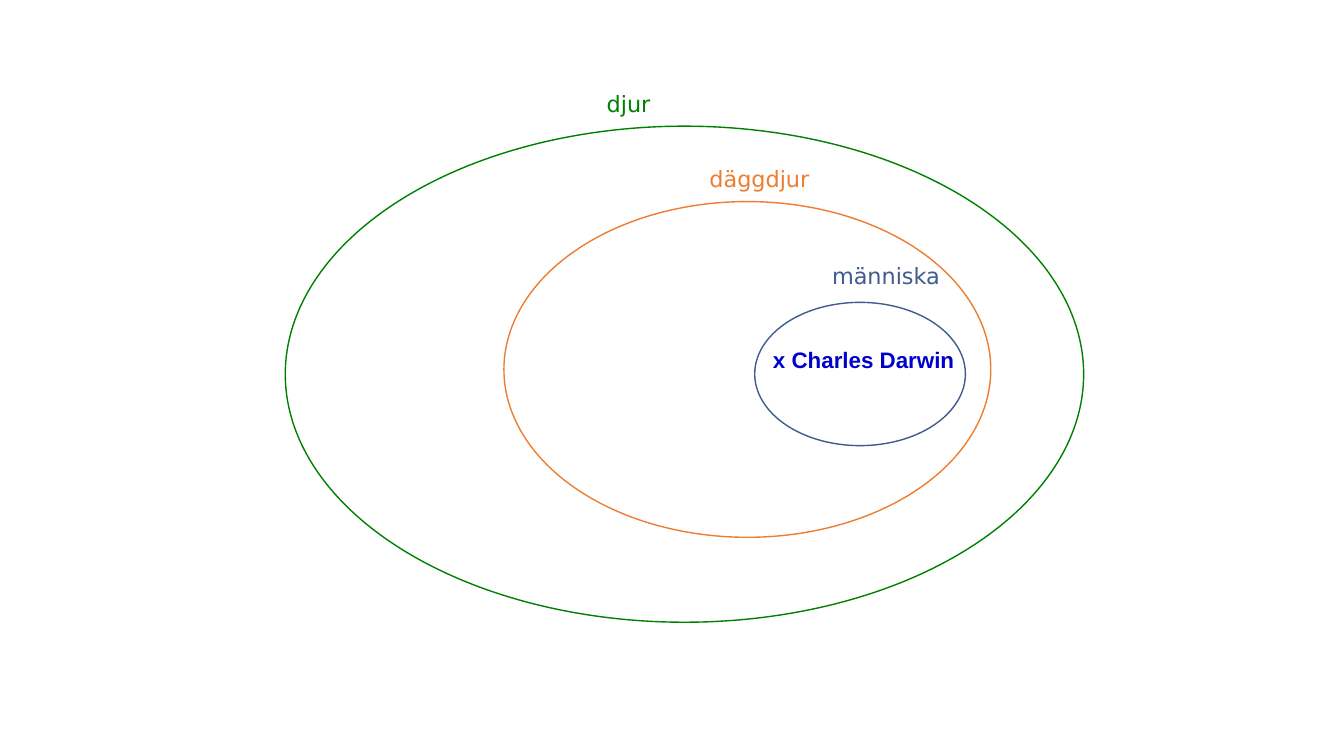
from dataclasses import dataclass

from pptx import Presentation
from pptx.dml.color import RGBColor
from pptx.enum.shapes import MSO_SHAPE
from pptx.enum.text import MSO_ANCHOR, PP_ALIGN
from pptx.util import Cm, Pt


@dataclass(frozen=True)
class Theme:
    """Colours, fonts and sizes of the slide."""
    background: RGBColor = RGBColor(0xFF, 0xFF, 0xFF)
    animal: RGBColor = RGBColor(0x00, 0x80, 0x00)
    mammal: RGBColor = RGBColor(0xED, 0x7D, 0x31)
    human: RGBColor = RGBColor(0x40, 0x5C, 0x8E)
    member: RGBColor = RGBColor(0x00, 0x00, 0xCC)
    label_font: str = "DejaVu Sans"
    member_font: str = "Arial"
    text_size: Pt = Pt(16)
    outline: Pt = Pt(1)


@dataclass(frozen=True)
class Box:
    """A rectangle in centimetres."""
    left: float
    top: float
    width: float
    height: float

    def inside(self, left, top, width, height):
        """Return a box offset from this box's top left corner."""
        return Box(self.left + left, self.top + top, width, height)

    def lengths(self):
        """Return the four sides as slide lengths."""
        return Cm(self.left), Cm(self.top), Cm(self.width), Cm(self.height)


THEME = Theme()
LABEL_HEIGHT = 0.92


def add_label(slide, box, text, color, font_name, bold=False, alignment=PP_ALIGN.LEFT):
    """Place one line of text in the middle of the box's height."""
    text_frame = slide.shapes.add_textbox(*box.lengths()).text_frame
    text_frame.word_wrap = not bold
    text_frame.vertical_anchor = MSO_ANCHOR.MIDDLE
    paragraph = text_frame.paragraphs[0]
    paragraph.alignment = alignment
    run = paragraph.add_run()
    run.text = text
    run.font.name = font_name
    run.font.size = THEME.text_size
    run.font.bold = bold
    run.font.color.rgb = color


def add_set(slide, box, name, color, label_left, label_rise, label_width):
    """Draw a set as an ellipse with its name above the top edge."""
    ellipse = slide.shapes.add_shape(MSO_SHAPE.OVAL, *box.lengths())
    ellipse.shadow.inherit = False
    ellipse.fill.solid()
    ellipse.fill.fore_color.rgb = THEME.background
    ellipse.line.color.rgb = color
    ellipse.line.width = THEME.outline
    label_box = box.inside(label_left, -label_rise, label_width, LABEL_HEIGHT)
    add_label(slide, label_box, name, color, THEME.label_font)


def add_nested_sets(slide, box):
    """Draw the three nested sets and the member of the innermost one."""
    mammal_box = box.inside(5.51, 1.9, 12.27, 8.46)
    human_box = mammal_box.inside(6.32, 2.54, 5.31, 3.61)
    add_set(slide, box, "djur", THEME.animal, 7.85, 1.04, 3.18)
    add_set(slide, mammal_box, "däggdjur", THEME.mammal, 4.93, 1.04, 3.73)
    add_set(slide, human_box, "människa", THEME.human, 1.7, 1.14, 3.58)
    add_label(slide, human_box.inside(0.18, 0.99, 5.13, LABEL_HEIGHT), "x Charles Darwin",
              THEME.member, THEME.member_font, bold=True, alignment=PP_ALIGN.CENTER)


def main():
    """Build and save the presentation."""
    presentation = Presentation()
    presentation.slide_width = Cm(33.87)
    presentation.slide_height = Cm(19.05)
    slide = presentation.slides.add_slide(presentation.slide_layouts[6])
    add_nested_sets(slide, Box(7.19, 3.18, 20.12, 12.5))
    presentation.save("out.pptx")


if __name__ == "__main__":
    main()
